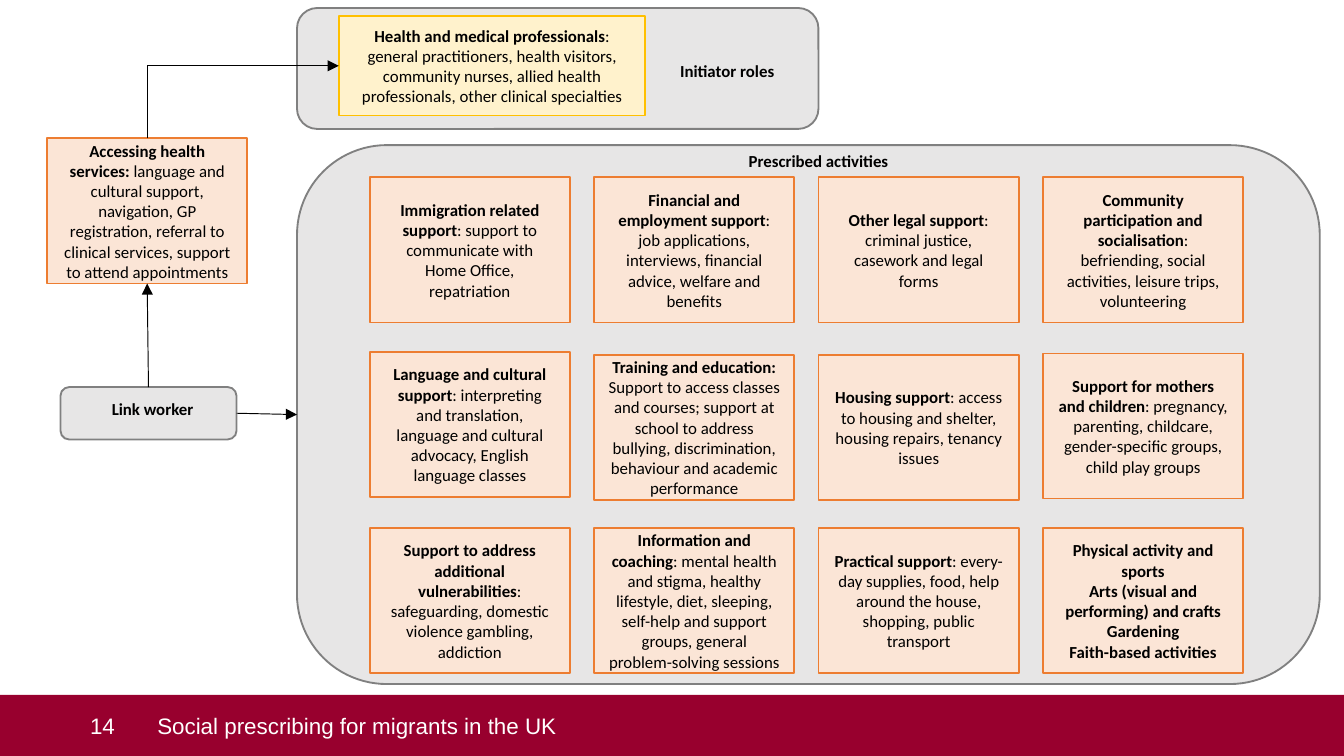
from pptx import Presentation
from pptx.dml.color import RGBColor
from pptx.enum.shapes import MSO_CONNECTOR, MSO_SHAPE
from pptx.enum.text import MSO_ANCHOR, PP_ALIGN
from pptx.oxml.ns import qn
from pptx.util import Inches, Pt
from lxml import etree

WHITE = RGBColor(0xFF, 0xFF, 0xFF)
BLACK = RGBColor(0x00, 0x00, 0x00)
CRIMSON = RGBColor(0x98, 0x00, 0x2E)
PANEL_FILL = RGBColor(0xE7, 0xE6, 0xE6)
PANEL_LINE = RGBColor(0x80, 0x80, 0x80)
PEACH = RGBColor(0xFB, 0xE5, 0xD6)
ORANGE = RGBColor(0xED, 0x7D, 0x31)
CREAM = RGBColor(0xFF, 0xF2, 0xCC)
GOLD = RGBColor(0xFF, 0xC0, 0x00)

BODY = {"name": "Calibri", "size": Pt(9)}
FOOTER = {"name": "Arial", "size": Pt(12)}

deck = Presentation()
deck.slide_width = Inches(10)
deck.slide_height = deck.slide_width * 9 // 16
page = deck.slides.add_slide(deck.slide_layouts[6])


def add_box(kind, bounds, fill, line=None):
    box = page.shapes.add_shape(kind, *map(Inches, bounds))
    box.shadow.inherit = False
    box.fill.solid()
    box.fill.fore_color.rgb = fill
    if line is None:
        box.line.fill.background()
    else:
        box.line.color.rgb = line
        box.line.width = Pt(1)
    return box


def write(box, paragraphs, font, color=BLACK, align=PP_ALIGN.CENTER):
    """Fill a shape with paragraphs, each a (bold text, plain text) pair."""
    frame = box.text_frame
    frame.word_wrap = True
    frame.vertical_anchor = MSO_ANCHOR.MIDDLE
    for index, (strong, plain) in enumerate(paragraphs):
        para = frame.paragraphs[0] if index == 0 else frame.add_paragraph()
        para.alignment = align
        for text, bold in ((strong, True), (plain, False)):
            if text:
                span = para.add_run()
                span.text = text
                for name, value in {**font, "bold": bold}.items():
                    setattr(span.font, name, value)
                span.font.color.rgb = color


# Footer
footer_bar = add_box(MSO_SHAPE.RECTANGLE, (0, 5.17, 10, 0.45), CRIMSON)
footer_bar.height = deck.slide_height - footer_bar.top
footer_title = page.shapes.add_textbox(*map(Inches, (0.98, 5.17, 8.82, 0.45)))
for box, text, indent in (
    (footer_bar, "14", 0.67),
    (footer_title, "Social prescribing for migrants in the UK", 0.19),
):
    write(box, [("", text)], FOOTER, WHITE, PP_ALIGN.LEFT)
    box.text_frame.margin_left = Inches(indent)
    box.text_frame.margin_top = box.text_frame.margin_bottom = 0

# Grey panels
initiators, activities, link_worker = [
    add_box(MSO_SHAPE.ROUNDED_RECTANGLE, bounds, PANEL_FILL, PANEL_LINE)
    for bounds in (
        (2.21, 0.06, 3.88, 0.9),
        (2.21, 1.08, 7.61, 4.01),
        (0.45, 2.88, 1.31, 0.39),
    )
]

# Grid of prescribed activities: card top, then paragraphs
ACTIVITY_ROWS = [
    [
        (1.32, [("Immigration related support",
                 ": support to communicate with Home Office, repatriation")]),
        (1.32, [("Financial and employment support",
                 ": job applications, interviews, financial advice, "
                 "welfare and benefits")]),
        (1.32, [("Other legal support",
                 ": criminal justice, casework and legal forms")]),
        (1.32, [("Community participation and socialisation",
                 ": befriending, social activities, leisure trips, volunteering")]),
    ],
    [
        (2.62, [("Language and cultural support",
                 ": interpreting and translation, language and cultural "
                 "advocacy, English language classes")]),
        (2.64, [("Training and education: ",
                 "Support to access classes and courses; support at school to "
                 "address bullying, discrimination, behaviour and academic "
                 "performance")]),
        (2.64, [("Housing support",
                 ": access to housing and shelter, housing repairs, "
                 "tenancy issues")]),
        (2.63, [("Support for mothers and children",
                 ": pregnancy, parenting, childcare, gender-specific groups, "
                 "child play groups")]),
    ],
    [
        (3.93, [("Support to address additional vulnerabilities",
                 ": safeguarding, domestic violence gambling, addiction")]),
        (3.93, [("Information and coaching",
                 ": mental health and stigma, healthy lifestyle, diet, sleeping, "
                 "self-help and support groups, general problem-solving sessions")]),
        (3.93, [("Practical support",
                 ": every-day supplies, food, help around the house, shopping, "
                 "public transport")]),
        (3.93, [("Physical activity and sports", ""),
                ("Arts (visual and performing) and crafts", ""),
                ("Gardening", ""),
                ("Faith-based activities", "")]),
    ],
]
CARD_WIDTH, CARD_HEIGHT = 1.49, 1.08
FULLEST_CARD = "Training and education: "
for row in ACTIVITY_ROWS:
    for column, (top, paragraphs) in enumerate(row):
        bounds = (2.75 + 1.67 * column, top, CARD_WIDTH, CARD_HEIGHT)
        card = add_box(MSO_SHAPE.RECTANGLE, bounds, PEACH, ORANGE)
        write(card, paragraphs, BODY)
        side = Inches(0.1 if paragraphs[0][0] == FULLEST_CARD else 0.11)
        card.text_frame.margin_left = card.text_frame.margin_right = side

# Health services and professionals
health_access = add_box(
    MSO_SHAPE.RECTANGLE, (0.35, 1.03, CARD_WIDTH, CARD_HEIGHT), PEACH, ORANGE)
write(health_access, [(
    "Accessing health services: ",
    "language and cultural support, navigation, GP registration, referral to "
    "clinical services, support to attend appointments")], BODY)
professionals = add_box(
    MSO_SHAPE.RECTANGLE, (2.52, 0.12, 2.28, 0.74), CREAM, GOLD)
write(professionals, [(
    "Health and medical professionals",
    ": general practitioners, health visitors, community nurses, allied health "
    "professionals, other clinical specialties")], BODY)

# Panel labels
for label, bounds in {
    "Initiator roles": (4.79, 0.25, 1.24, 0.55),
    "Prescribed activities": (4.91, 0.92, 2.36, 0.55),
    "Link worker": (0.58, 2.77, 1.11, 0.55),
}.items():
    write(page.shapes.add_textbox(*map(Inches, bounds)), [(label, "")], BODY)

# Arrows: start shape and side, end shape and side
for kind, start, start_side, end, end_side in (
    (MSO_CONNECTOR.STRAIGHT, link_worker, 3, activities, 1),
    (MSO_CONNECTOR.STRAIGHT, link_worker, 0, health_access, 2),
    (MSO_CONNECTOR.ELBOW, health_access, 0, professionals, 1),
):
    arrow = page.shapes.add_connector(kind, 0, 0, 0, 0)
    arrow.begin_connect(start, start_side)
    arrow.end_connect(end, end_side)
    arrow.line.color.rgb = BLACK
    arrow.line.width = Pt(0.5)
    etree.SubElement(arrow.line._get_or_add_ln(), qn("a:tailEnd"), type="triangle")
    properties = arrow._element.spPr
    etree.SubElement(properties, qn("a:effectLst"))
    if kind == MSO_CONNECTOR.ELBOW:
        # A single bend that leaves upwards is a quarter-turned bentConnector2
        properties.find(qn("a:prstGeom")).set("prst", "bentConnector2")
        turn = {"rot": "5400000", "flipH": "1", "flipV": "1"}
        for name, value in turn.items():
            properties.find(qn("a:xfrm")).set(name, value)
        frame = {"left": 1.54, "top": 0.05, "width": 0.54, "height": 1.42}
        for name, value in frame.items():
            setattr(arrow, name, Inches(value))

deck.save("out.pptx")
